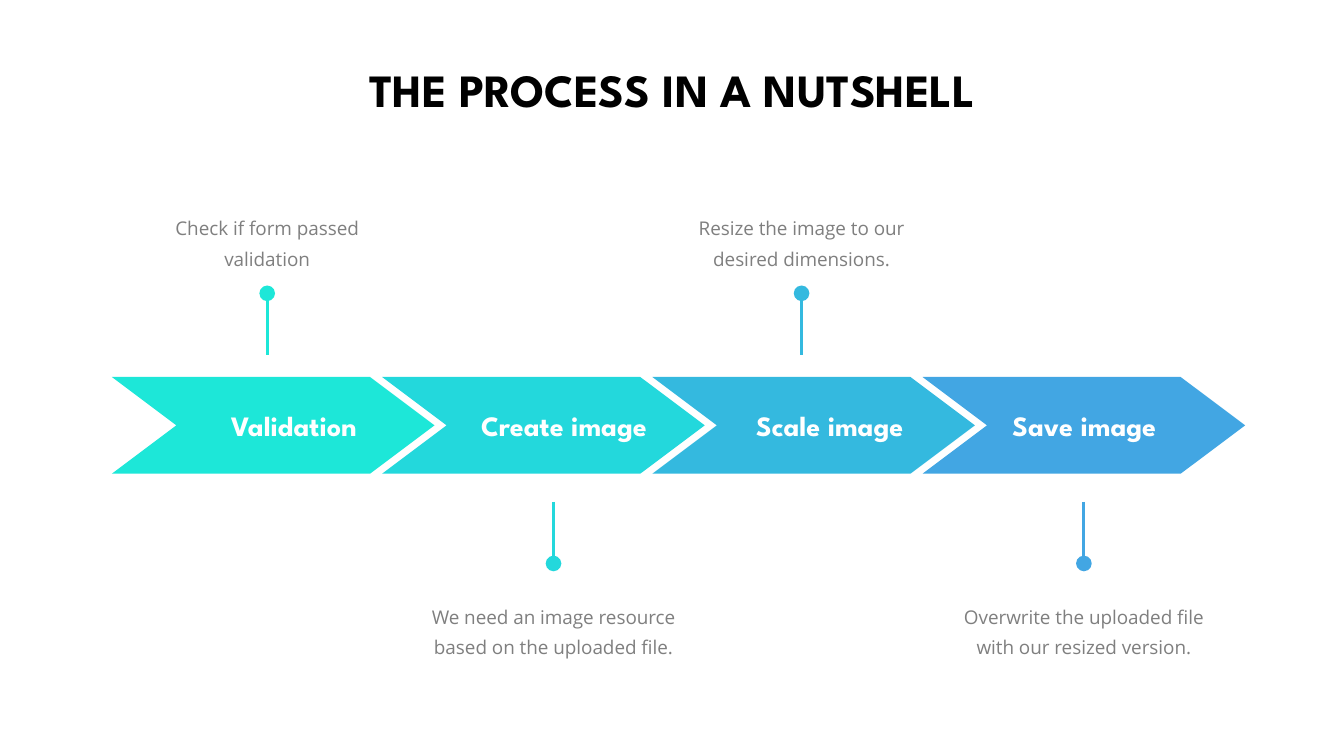
"""Build a four-step chevron process slide with callouts above and below."""
import pptx
import pptx.dml.color
import pptx.enum.shapes
import pptx.enum.text
import pptx.oxml.ns
import pptx.util
from lxml import etree
from pptx.util import Inches

COLORS = {
    "title": "000000",
    "label": "FFFFFF",
    "note": "7F7F7F",
    "validation": "1DE7D8",
    "create": "23D8DC",
    "scale": "34B9DF",
    "save": "42A6E3",
}
TITLE_FORMAT = {"name": "League Spartan", "size": pptx.util.Pt(33), "bold": True}
LABEL_FORMAT = {"name": "League Spartan", "size": pptx.util.Pt(20), "bold": True}
NOTE_FORMAT = {"name": "Open Sans", "size": pptx.util.Pt(13.5), "bold": False}
ANCHOR = pptx.enum.text.MSO_ANCHOR


def rgb(name):
    return pptx.dml.color.RGBColor.from_string(COLORS[name])


def write_text(shape, text, font_format, color, anchor, wrap, line_spacing=None):
    frame = shape.text_frame
    frame.text = text
    frame.word_wrap = wrap
    frame.vertical_anchor = anchor
    frame.auto_size = pptx.enum.text.MSO_AUTO_SIZE.SHAPE_TO_FIT_TEXT
    paragraph = frame.paragraphs[0]
    paragraph.alignment = pptx.enum.text.PP_ALIGN.CENTER
    if line_spacing:
        paragraph.line_spacing = pptx.util.Pt(line_spacing)
    font = paragraph.runs[0].font
    for attribute, value in font_format.items():
        setattr(font, attribute, value)
    font.color.rgb = rgb(color)
    return frame


presentation = pptx.Presentation()
presentation.slide_width = Inches(13.33)
presentation.slide_height = Inches(7.5)
slide = presentation.slides.add_slide(presentation.slide_layouts[5])

title = slide.shapes.title
title.left, title.top = Inches(3.07), Inches(0.41)
title.width, title.height = Inches(7.2), Inches(0.8)
write_text(title, "THE PROCESS IN A NUTSHELL", TITLE_FORMAT, "title", ANCHOR.TOP, False, 50)

CHEVRON_LEFT, CHEVRON_STEP = 1.11, 2.68
CHEVRON_WIDTH, CHEVRON_HEIGHT, CHEVRON_POINT = 3.2, 0.96, 0.64
SIDES = {
    "above": {"stem": 3.52, "dot": 2.91, "note": 2.02, "height": 0.71},
    "below": {"stem": 4.98, "dot": 5.59, "note": 5.87, "height": 0.74},
}
# color, label, label left, label width, note, note center, note width, side
STEPS = [
    ("validation", "Validation", 2.06, 1.71,
     "Check if form passed validation", 2.65, 2.64, "above"),
    ("create", "Create image", 4.51, 2.17,
     "We need an image resource based on the uploaded file.", 5.49, 2.85, "below"),
    ("scale", "Scale image", 7.25, 1.96,
     "Resize the image to our desired dimensions.", 7.95, 2.64, "above"),
    ("save", "Save image", 9.8, 1.91,
     "Overwrite the uploaded file with our resized version.", 10.75, 2.64, "below"),
]

for index, (color, label, label_left, label_width, note, center, note_width, side) in enumerate(STEPS):
    chevron = slide.shapes.add_shape(
        pptx.enum.shapes.MSO_SHAPE.CHEVRON,
        Inches(CHEVRON_LEFT + index * CHEVRON_STEP), Inches(3.74),
        Inches(CHEVRON_WIDTH), Inches(CHEVRON_HEIGHT))
    chevron.adjustments[0] = CHEVRON_POINT / CHEVRON_HEIGHT
    chevron.shadow.inherit = False
    chevron.fill.solid()
    chevron.fill.fore_color.rgb = rgb(color)
    chevron.line.fill.background()

    label_box = slide.shapes.add_textbox(
        Inches(label_left), Inches(4), Inches(label_width), Inches(0.44))
    write_text(label_box, label, LABEL_FORMAT, "label", ANCHOR.MIDDLE, False)

    place = SIDES[side]
    stem = slide.shapes.add_connector(
        pptx.enum.shapes.MSO_CONNECTOR.STRAIGHT,
        Inches(center), Inches(place["stem"]), Inches(center), Inches(place["dot"]))
    stem.line.color.rgb = rgb(color)
    stem.line.width = pptx.util.Pt(2.25)
    etree.SubElement(stem.line._get_or_add_ln(), pptx.oxml.ns.qn("a:tailEnd"),
                     type="oval", w="lg", len="lg")
    etree.SubElement(stem._element.spPr, pptx.oxml.ns.qn("a:effectLst"))

    note_box = slide.shapes.add_textbox(
        Inches(center - note_width / 2), Inches(place["note"]),
        Inches(note_width), Inches(place["height"]))
    frame = write_text(note_box, note, NOTE_FORMAT, "note", ANCHOR.TOP, True, 21.5)
    frame.margin_left = frame.margin_right = Inches(0.12)
    frame.margin_top = frame.margin_bottom = Inches(0.06)
    frame.paragraphs[0].space_before = pptx.util.Pt(2.7)

presentation.save("out.pptx")
